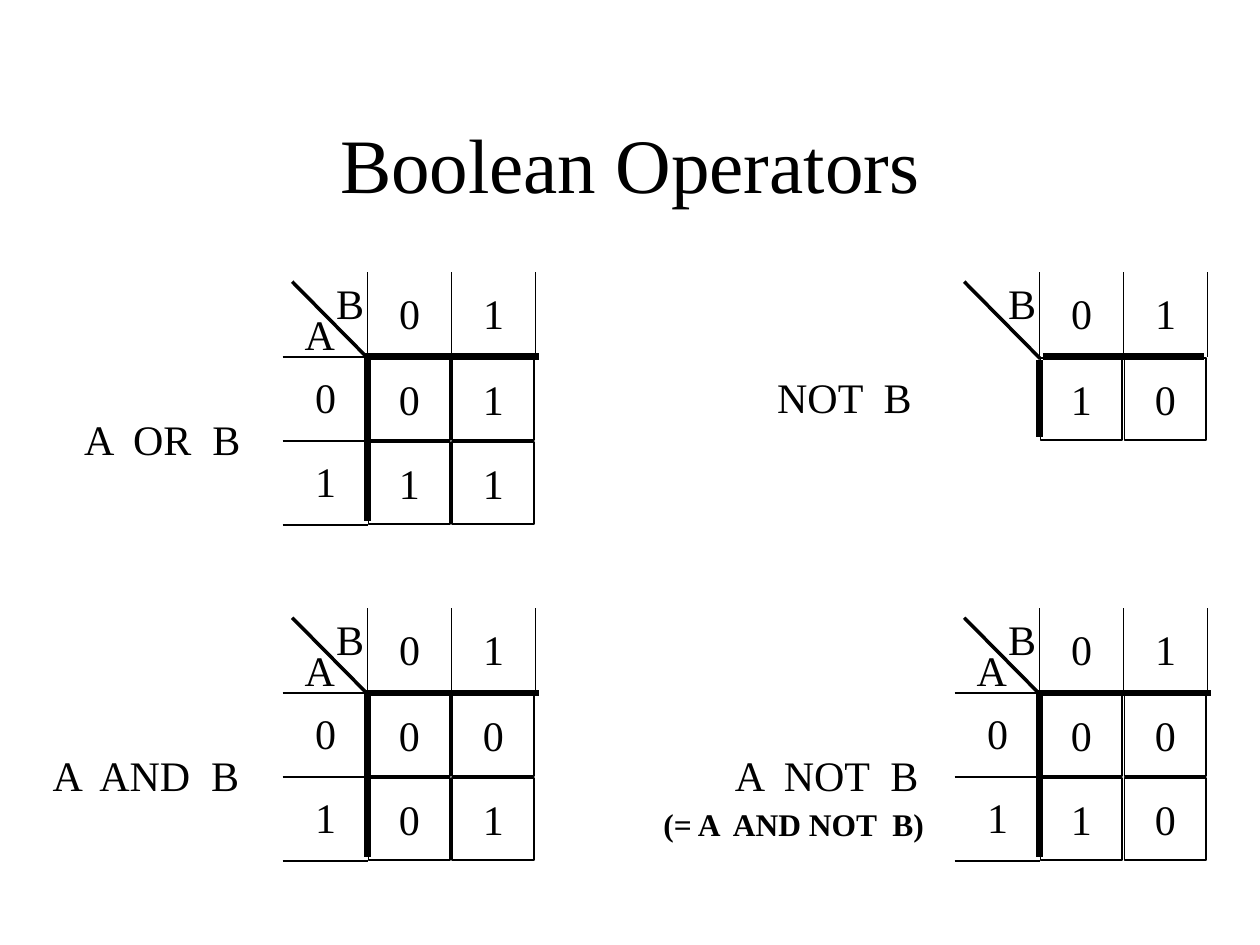
from lxml.etree import SubElement
from pptx import Presentation
from pptx.dml.color import RGBColor
from pptx.enum.shapes import MSO_CONNECTOR, MSO_SHAPE
from pptx.enum.text import MSO_ANCHOR, MSO_AUTO_SIZE, PP_ALIGN
from pptx.oxml.ns import qn
from pptx.util import Pt

FONT = "Times New Roman"
BLACK = "000000"
PITCH = 48
CELL = 46.8
LABEL_HEIGHT = 36


def write(shape, text, size=24, bold=False, align=PP_ALIGN.LEFT,
          anchor=MSO_ANCHOR.TOP, wrap=False, fit=MSO_AUTO_SIZE.SHAPE_TO_FIT_TEXT):
    """Put formatted text into a shape, text box or placeholder."""
    frame = shape.text_frame
    frame.word_wrap = wrap
    frame.auto_size = fit
    frame.vertical_anchor = anchor
    paragraph = frame.paragraphs[0]
    paragraph.alignment = align
    run = paragraph.add_run()
    run.text = text
    run.font.name = FONT
    run.font.size = Pt(size)
    run.font.bold = bold
    run.font.color.rgb = RGBColor.from_string(BLACK)


def rule(x1, y1, x2, y2, weight=1):
    """Draw a straight line without a shadow."""
    line = slide.shapes.add_connector(
        MSO_CONNECTOR.STRAIGHT, Pt(x1), Pt(y1), Pt(x2), Pt(y2))
    line.line.width = Pt(weight)
    line.line.color.rgb = RGBColor.from_string(BLACK)
    SubElement(line._element.spPr, qn("a:effectLst"))


presentation = Presentation()
presentation.slide_width, presentation.slide_height = Pt(720), Pt(540)
slide = presentation.slides.add_slide(presentation.slide_layouts[5])

title = slide.shapes.title
title.left, title.top, title.width, title.height = Pt(54), Pt(48), Pt(612), Pt(90)
write(title, "Boolean Operators", size=44, align=PP_ALIGN.CENTER,
      anchor=MSO_ANCHOR.MIDDLE, wrap=True, fit=MSO_AUTO_SIZE.NONE)

# Each truth table: left and top of its value grid, and its rows of values
truth_tables = [
    (210, 204, ["01", "11"]),  # OR
    (210, 396, ["00", "01"]),  # AND
    (594, 396, ["00", "10"]),  # A NOT B
    (594, 204, ["10"]),        # NOT B
]

# Text, left, top and width of every label
labels = [
    ("A  OR  B", 41, 232.8, 105),
    ("A  AND  B", 23, 424.8, 124),
    ("A  NOT  B", 412.8, 424.8, 121),
    ("NOT  B", 437, 208.8, 91.5),
]

for left, top, value_rows in truth_tables:
    has_a = len(value_rows) > 1

    for row, values in enumerate(value_rows):
        for column, value in enumerate(values):
            cell = slide.shapes.add_shape(
                MSO_SHAPE.RECTANGLE, Pt(left + 0.5 + column * PITCH),
                Pt(top + 0.5 + row * PITCH), Pt(CELL), Pt(CELL))
            cell.shadow.inherit = False
            cell.fill.background()
            cell.line.width = Pt(1)
            cell.line.color.rgb = RGBColor.from_string(BLACK)
            write(cell, value, align=PP_ALIGN.CENTER,
                  anchor=MSO_ANCHOR.MIDDLE, fit=MSO_AUTO_SIZE.NONE)

    # Header column and row
    for column in range(3):
        rule(left + column * PITCH, top - 48.5, left + column * PITCH, top)
    for column in range(2):
        labels.append((str(column), left + 11 + column * PITCH, top - 43.2, 26))
    labels.append(("B", left - 25, top - 49.2, 30))
    if has_a:
        for row in range(3):
            rule(left - 48.5, top + row * PITCH, left + 0.5, top + row * PITCH)
        for row in range(2):
            labels.append((str(row), left - 37, top + 4.8 + row * PITCH, 26))
        labels.append(("A", left - 43, top - 31.2, 32))

    # Heavy axes and the corner diagonal
    bar_start, bar_end = (-2, 98) if has_a else (2, 94)
    rule(left + bar_start, top, left + bar_end, top, weight=4)
    rule(left, top + 2, left, top + len(value_rows) * PITCH - 2, weight=4)
    rule(left - 43, top - 43, left + 0.5, top + 1, weight=2)

for text, left, top, width in labels:
    label = slide.shapes.add_textbox(Pt(left), Pt(top), Pt(width), Pt(LABEL_HEIGHT))
    write(label, text)

explanation = slide.shapes.add_textbox(Pt(372), Pt(456.5), Pt(180), Pt(29))
write(explanation, "(= A  AND NOT  B)", size=18, bold=True, wrap=True)

presentation.save("out.pptx")
